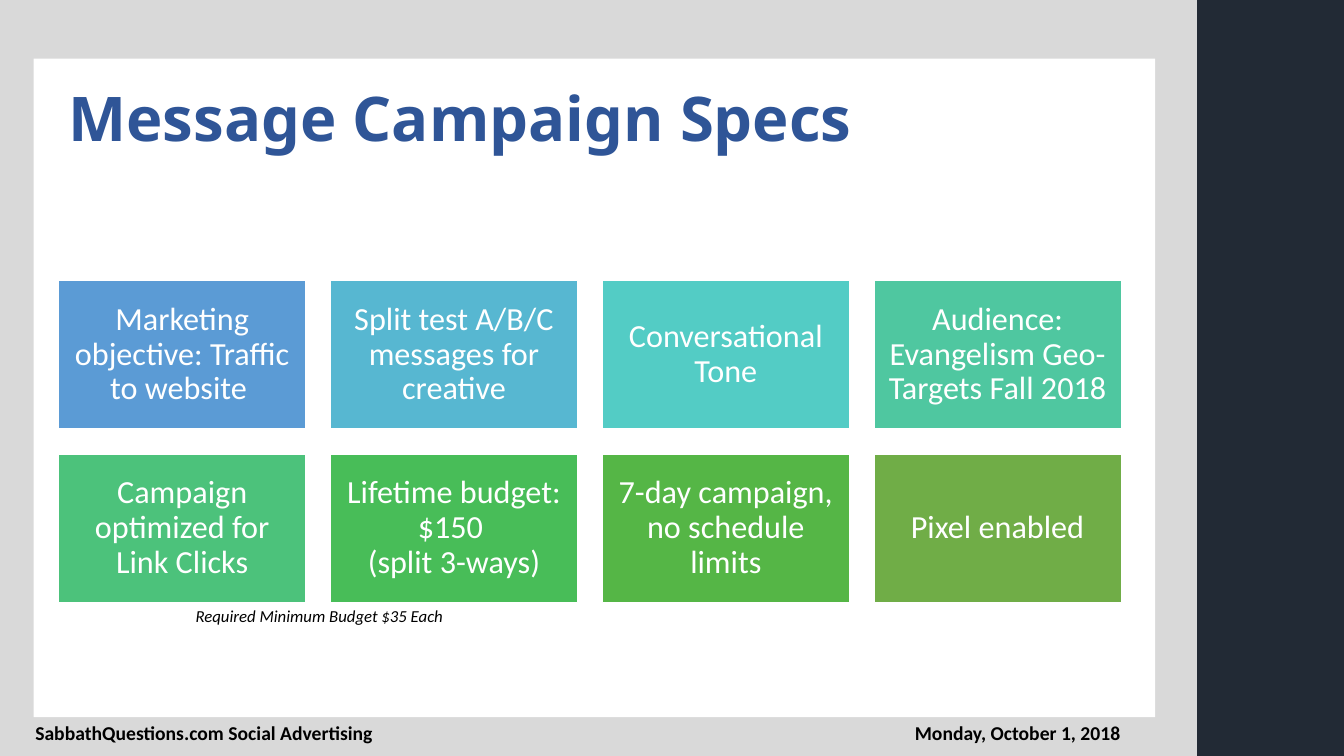
"""Builds the Message Campaign Specs slide."""
from pptx import Presentation
from pptx.dml.color import RGBColor
from pptx.enum import shapes, text
from pptx.util import Cm, Pt

WHITE = RGBColor(0xFF, 0xFF, 0xFF)
BLACK = RGBColor(0x00, 0x00, 0x00)
GREY = RGBColor(0xD9, 0xD9, 0xD9)
NAVY = RGBColor(0x22, 0x2A, 0x35)
BLUE = RGBColor(0x2F, 0x55, 0x97)

LEFT, CENTER, RIGHT = text.PP_ALIGN.LEFT, text.PP_ALIGN.CENTER, text.PP_ALIGN.RIGHT
MIDDLE, TOP = text.MSO_ANCHOR.MIDDLE, text.MSO_ANCHOR.TOP

TITLE = {"name": "Noto Sans", "size": Pt(44), "bold": True}
CARD = {"name": "Calibri", "size": Pt(23)}
FOOTER = {"name": "Calibri", "size": Pt(14), "bold": True}
NOTE = {"name": "Calibri", "size": Pt(12), "italic": True}

COLUMNS = 4
CARDS = [
    ("Marketing objective: Traffic to website ", RGBColor(0x5B, 0x9B, 0xD5)),
    ("Split test A/B/C messages for creative", RGBColor(0x57, 0xB7, 0xD1)),
    ("Conversational Tone", RGBColor(0x53, 0xCC, 0xC5)),
    ("Audience: Evangelism Geo-Targets Fall 2018", RGBColor(0x4F, 0xC7, 0xA0)),
    ("Campaign optimized for Link Clicks", RGBColor(0x4C, 0xC2, 0x7B)),
    ("Lifetime budget: $150 \n(split 3-ways)", RGBColor(0x48, 0xBD, 0x58)),
    ("7-day campaign, no schedule limits", RGBColor(0x55, 0xB6, 0x46)),
    ("Pixel enabled", RGBColor(0x70, 0xAD, 0x47)),
]


def write(sp, words, fmt, color, align, anchor=TOP, spacing=1.0):
    """Put one formatted paragraph into a shape."""
    tf = sp.text_frame
    tf.word_wrap = True
    tf.auto_size = text.MSO_AUTO_SIZE.NONE
    tf.vertical_anchor = anchor
    p = tf.paragraphs[0]
    p.text = words
    p.alignment = align
    p.line_spacing = spacing
    for r in p.runs:
        for key, value in fmt.items():
            setattr(r.font, key, value)
        r.font.color.rgb = color


def add_box(s, left, top, width, height, fill):
    """Add a plain filled rectangle, measured in centimetres."""
    sp = s.shapes.add_shape(shapes.MSO_SHAPE.RECTANGLE,
                            Cm(left), Cm(top), Cm(width), Cm(height))
    sp.shadow.inherit = False
    sp.fill.solid()
    sp.fill.fore_color.rgb = fill
    sp.line.fill.background()
    return sp


def add_title(s, words):
    """Move the title placeholder above the backdrop and fill it."""
    sp = s.shapes.title
    s.shapes.element.append(sp.element)
    sp.left, sp.top, sp.width, sp.height = Cm(1.47), Cm(1.47), Cm(26.77), Cm(3.2)
    write(sp, words, TITLE, BLUE, LEFT, MIDDLE, 0.9)


def add_card(s, index, words, fill):
    """Add a specification card at its place in the grid."""
    row, column = divmod(index, COLUMNS)
    sp = add_box(s, 1.48 + 6.85 * column, 7.07 + 4.37 * row, 6.23, 3.74, fill)
    sp.line.color.rgb = WHITE
    sp.line.width = Pt(1)
    tf = sp.text_frame
    for side in ("left", "top", "right", "bottom"):
        setattr(tf, f"margin_{side}", Cm(0.25))
    write(sp, words, CARD, WHITE, CENTER, MIDDLE, 0.9)


def add_label(s, left, top, width, height, words, fmt, align):
    """Add a black text label, measured in centimetres."""
    sp = s.shapes.add_textbox(Cm(left), Cm(top), Cm(width), Cm(height))
    write(sp, words, fmt, BLACK, align)


def main():
    """Build and save the slide."""
    prs = Presentation()
    prs.slide_width, prs.slide_height = Cm(33.87), Cm(19.05)
    s = prs.slides.add_slide(prs.slide_layouts[5])
    add_box(s, 0, 0, 30.17, 19.05, GREY)
    add_box(s, 0.85, 1.48, 28.26, 16.59, WHITE)
    add_box(s, 30.17, 0, 3.7, 19.05, NAVY)
    add_title(s, "Message Campaign Specs")
    for index, (words, fill) in enumerate(CARDS):
        add_card(s, index, words, fill)
    add_label(s, 15.24, 18.03, 13.25, 0.86, "Monday, October 1, 2018", FOOTER, RIGHT)
    add_label(s, 4.62, 15.14, 6.86, 0.76, "Required Minimum Budget $35 Each", NOTE, CENTER)
    add_label(s, 0.64, 18.03, 13.25, 0.86, "SabbathQuestions.com Social Advertising", FOOTER, LEFT)
    prs.save("out.pptx")


if __name__ == "__main__":
    main()
